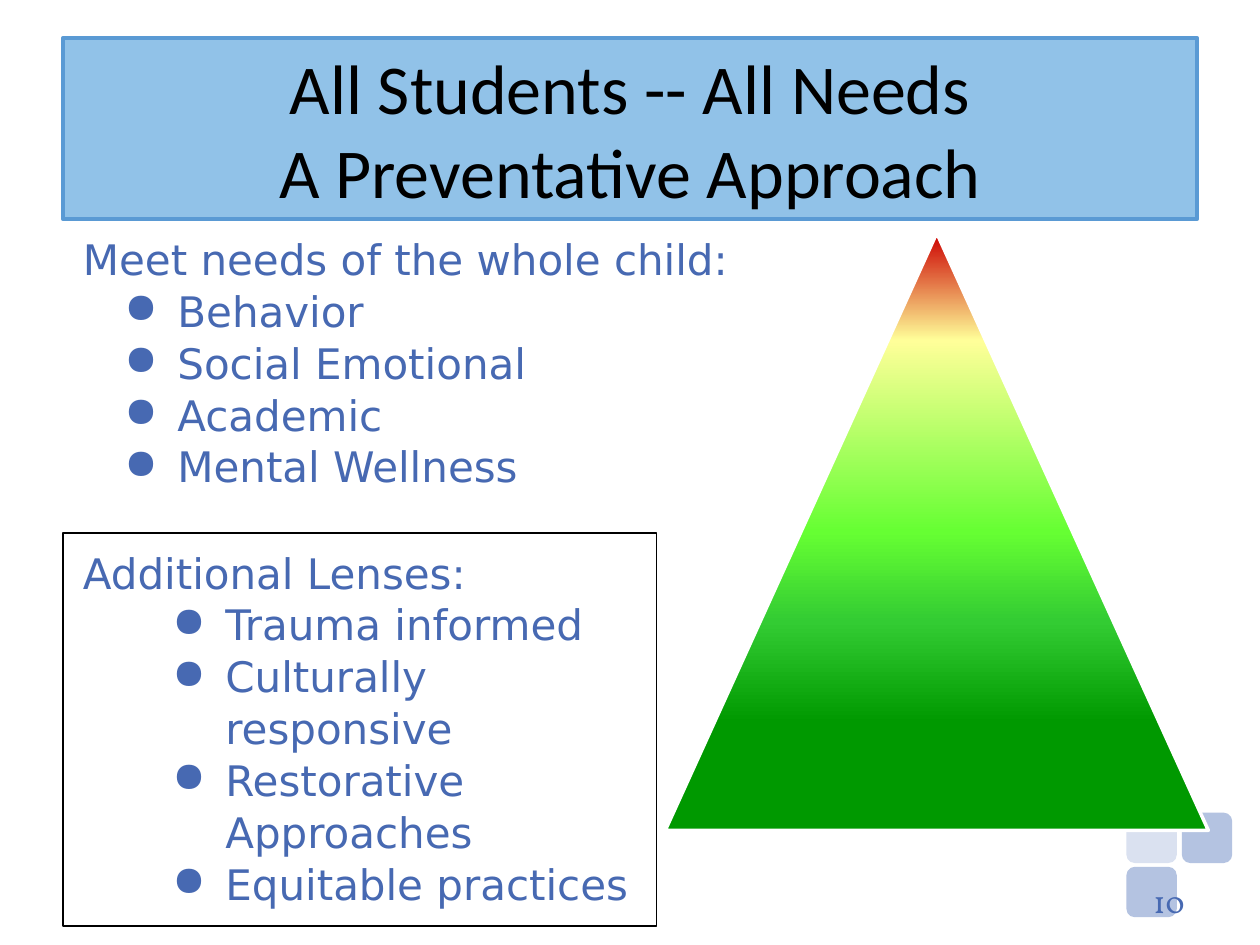
from lxml import etree
from pptx import Presentation
from pptx.dml.color import RGBColor
from pptx.enum import shapes, text
from pptx.oxml import ns
from pptx.util import Inches, Pt

BLUE = RGBColor(0x47, 0x69, 0xB2)
BLACK = RGBColor(0, 0, 0)
WHITE = RGBColor(0xFF, 0xFF, 0xFF)
BAND = RGBColor(0x91, 0xC2, 0xE8)
EDGE = RGBColor(0x5A, 0x9A, 0xD4)
MID = RGBColor(0xB4, 0xC3, 0xE1)
PALE = RGBColor(0xDA, 0xE1, 0xF0)
TIERS = [(0, RGBColor(0xCC, 0, 0)), (18, RGBColor(0xFF, 0xFF, 0x99)),
         (50, RGBColor(0x66, 0xFF, 0x33)), (65, RGBColor(0x33, 0xCC, 0x33)),
         (82, RGBColor(0, 0x99, 0)), (100, RGBColor(0, 0x99, 0))]
SHAPE = shapes.MSO_SHAPE


def sub(node, tag, **attrs):
    return etree.SubElement(node, ns.qn(tag), **attrs)


def place(*box):
    return [Inches(v) for v in box]


def add_shape(slide, kind, box, fill=None, line=None, width=1):
    shape = slide.shapes.add_shape(kind, *place(*box))
    shape.shadow.inherit = False
    paint(shape, fill, line, width)
    return shape


def paint(shape, fill, line, width):
    if fill is None:
        shape.fill.background()
    else:
        shape.fill.solid()
        shape.fill.fore_color.rgb = fill
    if line is None:
        shape.line.fill.background()
    else:
        shape.line.color.rgb = line
        shape.line.width = Pt(width)


def set_frame(shape, anchor, pad=0.1):
    frame = shape.text_frame
    frame.word_wrap = True
    frame.auto_size = text.MSO_AUTO_SIZE.NONE
    frame.vertical_anchor = anchor
    frame.margin_left = frame.margin_right = Inches(0.1)
    frame.margin_top = frame.margin_bottom = Inches(pad)
    return frame


def add_run(para, words, face, size, color):
    run = para.add_run()
    run.text = words
    run.font.name = face
    run.font.size = Pt(size)
    run.font.color.rgb = color


def add_title(slide, lines):
    title = slide.shapes.title
    title.left, title.top, title.width, title.height = place(0.5, 0.3, 9, 1.44)
    paint(title, BAND, EDGE, 2.25)
    para = set_frame(title, text.MSO_ANCHOR.MIDDLE).paragraphs[0]
    para.alignment = text.PP_ALIGN.CENTER
    for i, line in enumerate(lines):
        if i:
            para.add_line_break()
        add_run(para, line, "Calibri", 40, BLACK)


def fill_list(shape, head, items, indent):
    """Write a heading and its bullets; indent is the bullets' text edge."""
    frame = set_frame(shape, text.MSO_ANCHOR.TOP)
    for i, words in enumerate([head] + items):
        para = frame.add_paragraph() if i else frame.paragraphs[0]
        para.alignment = text.PP_ALIGN.LEFT
        para.line_spacing = 1.03
        props = para._p.get_or_add_pPr()
        props.set("marL", str(Inches(indent if i else 0.06)))
        props.set("indent", str(Inches(-0.42 if i else 0)))
        if i:
            color = sub(props, "a:buClr")
            sub(color, "a:srgbClr", val=str(BLUE))
            sub(props, "a:buChar", char="●")
        else:
            sub(props, "a:buNone")
        add_run(para, words, "DejaVu Sans", 24, BLUE)


def add_pyramid(slide):
    shape = add_shape(slide, SHAPE.TRAPEZOID, (5.28, 1.85, 4.31, 4.74),
                      line=WHITE, width=2)
    shape.adjustments[0] = 0.541
    shape.fill.gradient()
    grad = shape._element.spPr.find(ns.qn("a:gradFill"))
    for child in list(grad):
        grad.remove(child)
    stops = sub(grad, "a:gsLst")
    for pos, color in TIERS:
        stop = sub(stops, "a:gs", pos=str(pos * 1000))
        sub(stop, "a:srgbClr", val=str(color))
    sub(grad, "a:lin", ang="5400000", scaled="0")


def add_number(slide, number):
    box = slide.shapes.add_textbox(*place(7.17, 6.95, 2.33, 0.4))
    para = set_frame(box, text.MSO_ANCHOR.MIDDLE, 0.05).paragraphs[0]
    para.alignment = text.PP_ALIGN.RIGHT
    add_run(para, number, "Vollkorn", 18, BLUE)


def main():
    deck = Presentation()
    deck.slide_width, deck.slide_height = place(10, 7.5)
    slide = deck.slides.add_slide(deck.slide_layouts[5])
    for left, top, color in [(9.38, 6.45, MID), (8.94, 6.88, MID),
                             (8.94, 6.45, PALE)]:
        add_shape(slide, SHAPE.ROUNDED_RECTANGLE, (left, top, 0.4, 0.4), color)
    add_title(slide, ["All Students -- All Needs", "A Preventative Approach"])
    needs = slide.shapes.add_textbox(*place(0.5, 1.74, 8.53, 2.05))
    fill_list(needs, "Meet needs of the whole child:",
              ["Behavior", "Social Emotional", "Academic", "Mental Wellness"],
              0.81)
    add_number(slide, "10")
    add_pyramid(slide)
    lenses = add_shape(slide, SHAPE.RECTANGLE, (0.5, 4.23, 4.71, 3.12),
                       line=BLACK, width=0.75)
    fill_list(lenses, "Additional Lenses:",
              ["Trauma informed", "Culturally responsive",
               "Restorative Approaches", "Equitable practices"], 1.19)
    deck.save("out.pptx")


if __name__ == "__main__":
    main()
